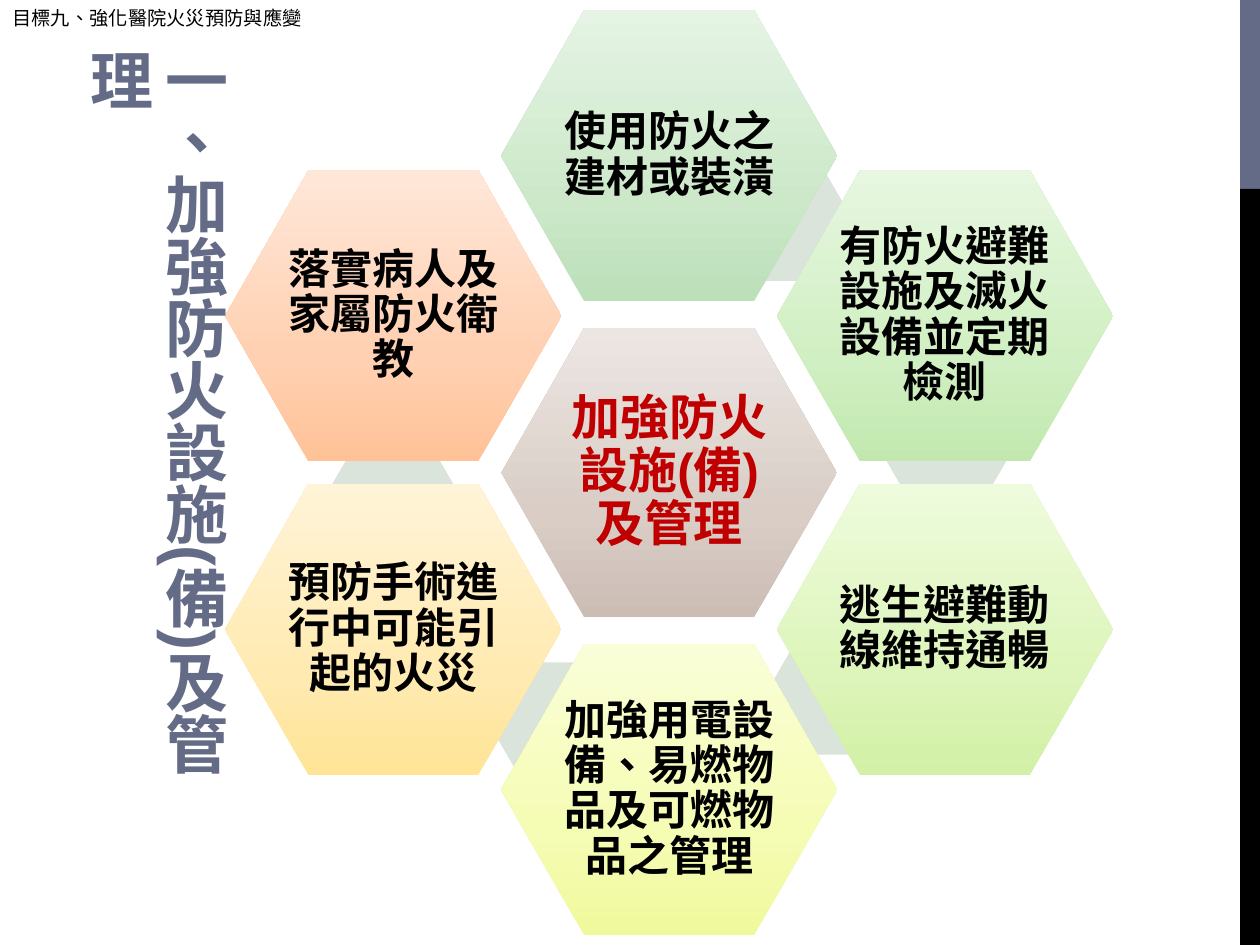
from copy import deepcopy

from lxml import etree
from pptx import Presentation
from pptx.dml.color import RGBColor
from pptx.enum import lang, shapes, text
from pptx.oxml import ns
from pptx.util import Cm, Pt

CENTER_X, CENTER_Y = 13.49, 9.53
SIDE_X, SIDE_Y, POLE_Y = 5.56, 3.16, 6.39
HEX_SIZE = (6.78, 5.87)
CORE_SIZE = (6.76, 5.84)
LINK_SIZE = (2.79, 2.39)

CORE = ("加強防火設施(備)及管理", ("CCBDB4", "D9CDC6", "ECE6E3"))
RING = [
    (0, -POLE_Y, "使用防火之建材或裝潢", ("BCE0B9", "CCE8C9", "E5F4E4")),
    (SIDE_X, -SIDE_Y, "有防火避難設施及滅火設備並定期檢測", ("C2E8AF", "D0EFC2", "E7F7E0")),
    (SIDE_X, SIDE_Y, "逃生避難動線維持通暢", ("D2F0A6", "DDF5BA", "EEFBDC")),
    (0, POLE_Y, "加強用電設備、易燃物品及可燃物品之管理", ("F0F99C", "F5FCB3", "FAFED8")),
    (-SIDE_X, SIDE_Y, "預防手術進行中可能引起的火災", ("FFE496", "FFEAB1", "FFF4D8")),
    (-SIDE_X, -SIDE_Y, "落實病人及家屬防火衛教", ("FFC297", "FFD0B1", "FFE7D8")),
]
LINKS = [(15.82, 4.47), (19.08, 8.97), (16.81, 14.02), (11.23, 14.55), (7.92, 10.06)]


def rgb(value):
    return RGBColor.from_string(value)


def set_attrs(obj, values):
    for name, value in values.items():
        setattr(obj, name, value)


def set_margins(tf, value):
    set_attrs(tf, {f"margin_{side}": Cm(value) for side in ("left", "top", "right", "bottom")})


def add_run(p, words, size, color, bold=False, font="Arial"):
    r = p.add_run()
    r.text = words
    set_attrs(r.font, {"size": Pt(size), "bold": bold, "name": font,
                       "language_id": lang.MSO_LANGUAGE_ID.TRADITIONAL_CHINESE})
    r.font.color.rgb = rgb(color)
    return r


def add_plain(s, kind, left, top, width, height, color=None):
    sp = s.shapes.add_shape(kind, Cm(left), Cm(top), Cm(width), Cm(height))
    sp.shadow.inherit = False
    sp.line.fill.background()
    if color:
        sp.fill.solid()
        sp.fill.fore_color.rgb = rgb(color)
    return sp


def add_hexagon(s, x, y, size, adj, color=None):
    w, h = size
    sp = add_plain(s, shapes.MSO_SHAPE.HEXAGON, x - w / 2, y - h / 2, w, h, color)
    sp.adjustments[0] = adj
    return sp


def set_gradient(sp, colors):
    sp.fill.gradient()
    grad = sp.fill._xPr.find(ns.qn("a:gradFill"))
    stops = grad.find(ns.qn("a:gsLst"))
    for stop in list(stops):
        stops.remove(stop)
    for pos, color in zip((0, 35, 100), colors):
        gs = etree.SubElement(stops, ns.qn("a:gs"), pos=str(pos * 1000))
        etree.SubElement(gs, ns.qn("a:srgbClr"), val=color)
    sp.fill.gradient_angle = 90


def add_topic(s, x, y, size, words, colors, font_size, color, margin):
    sp = add_hexagon(s, x, y, size, 0.286)
    set_gradient(sp, colors)
    tf = sp.text_frame
    set_attrs(tf, {"word_wrap": True, "vertical_anchor": text.MSO_ANCHOR.MIDDLE})
    set_margins(tf, margin)
    p = tf.paragraphs[0]
    set_attrs(p, {"alignment": text.PP_ALIGN.CENTER, "line_spacing": 0.9})
    add_run(p, words, font_size, color, True)


def add_header(s, words):
    tf = s.shapes.add_textbox(0, 0, Cm(6.4), Cm(0.74)).text_frame
    set_attrs(tf, {"word_wrap": False, "auto_size": text.MSO_AUTO_SIZE.SHAPE_TO_FIT_TEXT})
    r = add_run(tf.paragraphs[0], words, 11, "000000", font="Noto Sans CJK SC")
    etree.SubElement(r.font._element, ns.qn("a:ea"), typeface="Noto Sans CJK SC")


def add_vertical_title(s, words):
    tf = s.shapes.add_textbox(0, Cm(0.74), Cm(5.72), Cm(16.26)).text_frame
    set_attrs(tf, {"word_wrap": True, "vertical_anchor": text.MSO_ANCHOR.BOTTOM})
    tf._txBody.bodyPr.set("vert", "eaVert")
    p = tf.paragraphs[0]
    r = add_run(p, words, 36, "646B86", True)
    props = r.font._element
    props.set("spc", "-60")
    p.add_line_break()
    p._p[-1].append(deepcopy(props))
    end = etree.SubElement(p._p, ns.qn("a:endParaRPr"), dict(props.attrib))
    end.extend(deepcopy(child) for child in props)


def main():
    prs = Presentation()
    set_attrs(prs, {"slide_width": Cm(25.4), "slide_height": Cm(19.05)})
    s = prs.slides.add_slide(prs.slide_layouts[6])
    for top, height, color in ((0, 3.81, "646B86"), (3.81, 15.24, "000000")):
        add_plain(s, shapes.MSO_SHAPE.RECTANGLE, 25, top, 0.4, height, color)
    add_header(s, "目標九、強化醫院火災預防與應變")
    for x, y in LINKS:
        add_hexagon(s, x, y, LINK_SIZE, 0.289, "DBE4DA")
    add_topic(s, CENTER_X, CENTER_Y, CORE_SIZE, *CORE, 28, "C00000", 0.1)
    for dx, dy, words, colors in RING:
        add_topic(s, CENTER_X + dx, CENTER_Y + dy, HEX_SIZE, words, colors, 24, "000000", 0)
    add_vertical_title(s, "一、加強防火設施(備)及管理")
    prs.save("out.pptx")


if __name__ == "__main__":
    main()
